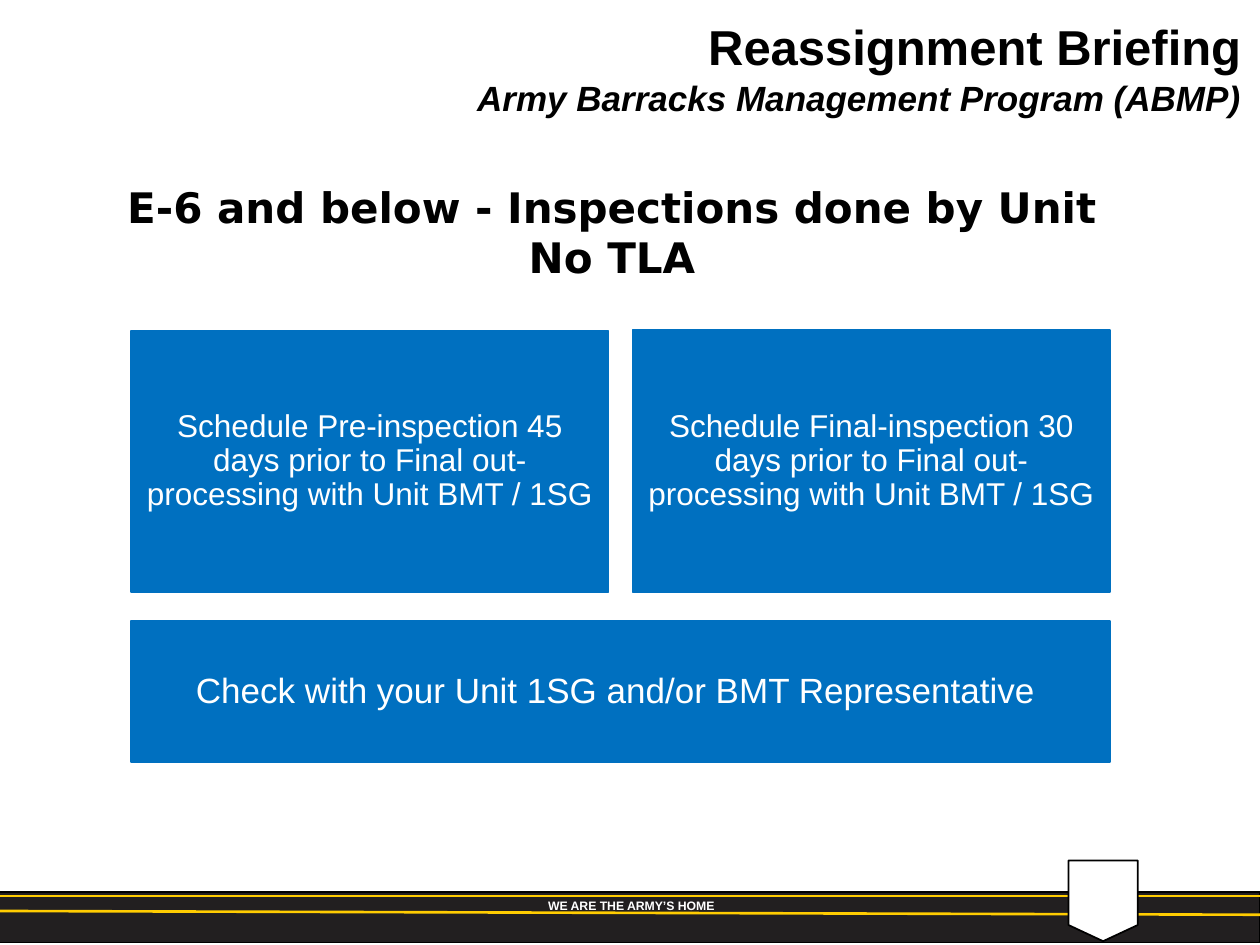
from lxml import etree
from pptx import Presentation
from pptx import util as u
from pptx.dml.color import RGBColor
from pptx.enum import shapes, text
from pptx.oxml import ns

COLORS = {
    "black": "000000",
    "white": "FFFFFF",
    "band": "221F20",
    "gold": "FFCC01",
    "blue": "0070C0",
}
MARGINS = ("margin_left", "margin_top", "margin_right", "margin_bottom")
CENTER = text.PP_ALIGN.CENTER


def color(name):
    return RGBColor.from_string(COLORS[name])


def apply(target, values):
    for name, value in values.items():
        setattr(target, name, value)


def write(shape, lines, alignment, anchor, margins):
    frame = shape.text_frame
    apply(frame, {
        "word_wrap": True,
        "auto_size": text.MSO_AUTO_SIZE.NONE,
        "vertical_anchor": anchor,
    })
    apply(frame, {name: u.Inches(size) for name, size in zip(MARGINS, margins)})
    for index, (words, size, font_color, font_format, spacing) in enumerate(lines):
        paragraph = frame.paragraphs[0] if index == 0 else frame.add_paragraph()
        paragraph.text = words
        apply(paragraph, {"alignment": alignment, **spacing})
        for run in paragraph.runs:
            apply(run.font, {"size": u.Pt(size), "name": "Arial", **font_format})
            run.font.color.rgb = color(font_color)


def add_title(slide):
    title = slide.shapes.title
    box = {"left": 1.58, "top": -0.01, "width": 8.27, "height": 0.96}
    apply(title, {name: u.Inches(size) for name, size in box.items()})
    lines = [
        ("Reassignment Briefing", 28, "black", {"bold": True}, {}),
        ("Army Barracks Management Program (ABMP)", 20, "black",
         {"bold": True, "italic": True}, {"space_before": u.Pt(1.1)}),
    ]
    write(title, lines, text.PP_ALIGN.RIGHT, text.MSO_ANCHOR.MIDDLE, (0, 0.13, 0, 0))


def add_label(slide, box, words, size, font_color, font_format):
    label = slide.shapes.add_textbox(*map(u.Inches, box))
    lines = [(words, size, font_color, font_format, {})]
    write(label, lines, CENTER, text.MSO_ANCHOR.TOP, (0.1, 0.05, 0.1, 0.05))


def add_block(slide, kind, box, fill, line, weight=1):
    block = slide.shapes.add_shape(kind, *map(u.Inches, box))
    block.shadow.inherit = False
    block.fill.solid()
    block.fill.fore_color.rgb = color(fill)
    block.line.color.rgb = color(line)
    block.line.width = u.Pt(weight)
    return block


def add_step(slide, box, words, size, margin):
    step = add_block(slide, shapes.MSO_SHAPE.RECTANGLE, box, "blue", "blue")
    lines = [(words, size, "white", {}, {"line_spacing": 0.9})]
    write(step, lines, CENTER, text.MSO_ANCHOR.MIDDLE, [margin] * 4)


def add_stripe(slide, ends):
    stripe = slide.shapes.add_connector(
        shapes.MSO_CONNECTOR.STRAIGHT, *map(u.Inches, ends))
    stripe.line.color.rgb = color("gold")
    stripe.line.width = u.Pt(1.5)
    etree.SubElement(stripe._element.spPr, ns.qn("a:effectLst"))


def add_footer(slide):
    add_block(slide, shapes.MSO_SHAPE.RECTANGLE, (-0.01, 7.08, 10.01, 0.4), "band", "black")
    for ends in ((-0.01, 7.11, 10.02, 7.11), (-0.03, 7.23, 10.01, 7.26)):
        add_stripe(slide, ends)
    add_label(slide, (3.7, 7.08, 2.62, 0.22), "WE ARE THE ARMY’S HOME", 7, "white",
              {"bold": True})
    add_block(slide, shapes.MSO_SHAPE.FLOWCHART_OFFPAGE_CONNECTOR,
              (8.48, 6.83, 0.55, 0.64), "white", "black")


def main():
    presentation = Presentation()
    presentation.slide_width = u.Inches(10)
    presentation.slide_height = u.Inches(7.5)
    slide = presentation.slides.add_slide(presentation.slide_layouts[5])
    add_footer(slide)
    add_label(slide, (0.5, 1.39, 8.83, 0.91),
              "E-6 and below - Inspections done by Unit \vNo TLA ", 24, "black",
              {"name": "DejaVu Sans", "bold": True})
    inspections = (("Pre", 45, 1.04, 2.63), ("Final", 30, 5.02, 2.62))
    for stage, days, left, top in inspections:
        words = (f"Schedule {stage}-inspection {days} days prior to "
                 "Final out-processing with Unit BMT / 1SG")
        add_step(slide, (left, top, 3.79, 4.7 - top), words, 18, 0.07)
    add_step(slide, (1.04, 4.93, 7.77, 1.12),
             "Check with your Unit 1SG and/or BMT Representative ", 20, 0.08)
    add_title(slide)
    presentation.save("out.pptx")


if __name__ == "__main__":
    main()
